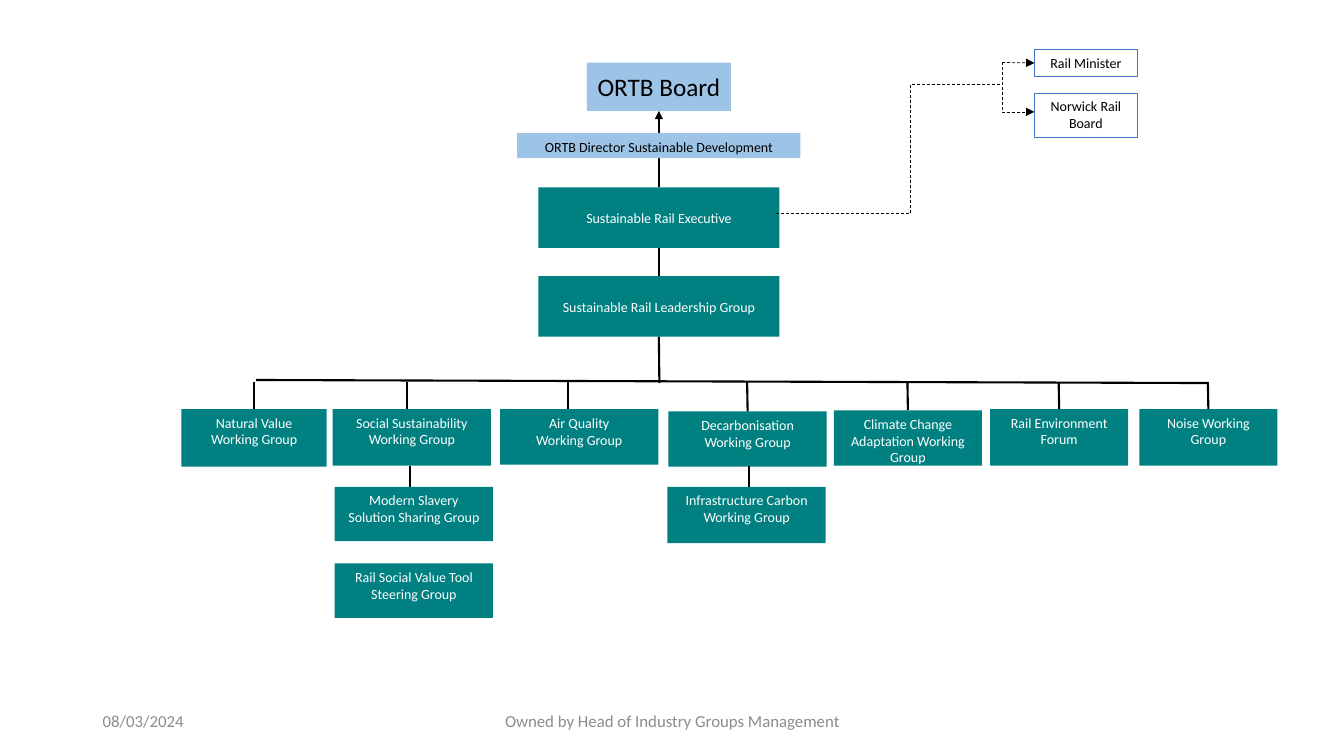
from dataclasses import dataclass

from pptx import Presentation
from pptx.dml.color import RGBColor as RGB
from pptx.enum.dml import MSO_LINE
from pptx.enum.shapes import MSO_CONNECTOR as CONN, MSO_SHAPE as SHAPE
from pptx.enum.text import MSO_ANCHOR as ANCHOR, PP_ALIGN as ALIGN
from pptx.oxml.ns import qn
from pptx.util import Pt
from lxml import etree

PX = 9144  # one hundred px to the inch
TOP, LEFT, BOTTOM, RIGHT = range(4)


@dataclass(frozen=True)
class Theme:
    font: str = "Calibri"
    teal: str = "008080"
    sky: str = "9DC3E6"
    outline: str = "4472C4"
    black: str = "000000"
    white: str = "FFFFFF"
    grey: str = "8C8C8C"
    title: int = 18
    footer: int = 12
    body: int = 10
    solid: float = 1.5
    dashed: float = 0.5
    border: float = 0.25


T = Theme()


def emu(*lengths):
    return [n * PX for n in lengths]


def put_text(s, text, size=T.body, color=T.white, align=ALIGN.CENTER, anchor=ANCHOR.TOP):
    tf = s.text_frame
    tf.word_wrap = True
    tf.vertical_anchor = anchor
    for i, line in enumerate(text.split("\n")):
        p = tf.paragraphs[0] if i == 0 else tf.add_paragraph()
        p.alignment = align
        r = p.add_run()
        r.text = line
        r.font.name, r.font.size = T.font, Pt(size)
        r.font.color.rgb = RGB.from_string(color)


def box(shapes, text, at, fill=T.teal, **fmt):
    """A filled box, or an outlined one when fill is None."""
    s = shapes.add_shape(SHAPE.RECTANGLE, *emu(*at))
    s.shadow.inherit = False
    if fill:
        s.fill.solid()
        s.fill.fore_color.rgb = RGB.from_string(fill)
        s.line.fill.background()
    else:
        s.fill.background()
        s.line.color.rgb = RGB.from_string(T.outline)
        s.line.width = Pt(T.border)
    put_text(s, text, **fmt)
    return s


def label(shapes, text, at, align):
    s = shapes.add_textbox(*emu(*at))
    put_text(s, text, size=T.footer, color=T.grey, align=align, anchor=ANCHOR.MIDDLE)


def link(shapes, start, end, dashed=False, arrow=False, bend=None, begin=None, finish=None):
    """A line; begin and finish are (box, side) pairs to join it to."""
    kind = CONN.STRAIGHT if bend is None else CONN.ELBOW
    c = shapes.add_connector(kind, *emu(*start, *end))
    c.line.color.rgb = RGB.from_string(T.black)
    c.line.width = Pt(T.dashed if dashed else T.solid)
    if dashed:
        c.line.dash_style = MSO_LINE.DASH
    if arrow:
        etree.SubElement(c.line._get_or_add_ln(), qn("a:tailEnd"), type="triangle")
    if bend is not None:
        guides = c._element.spPr.find(qn("a:prstGeom")).get_or_add_avLst()
        etree.SubElement(guides, qn("a:gd"), name="adj1", fmla=f"val {bend}")
    etree.SubElement(c._element.spPr, qn("a:effectLst"))
    if begin:
        c.begin_connect(*begin)
    if finish:
        c.end_connect(*finish)


def leadership(shapes):
    board = box(shapes, "ORTB Board", (582, 62, 143, 48), fill=T.sky,
                size=T.title, color=T.black, anchor=ANCHOR.MIDDLE)
    executive = box(shapes, "Sustainable Rail Executive", (534, 186, 239, 60),
                    anchor=ANCHOR.MIDDLE)
    group = box(shapes, "Sustainable Rail Leadership Group", (534, 274, 239, 60),
                anchor=ANCHOR.MIDDLE)
    link(shapes, (654, 186), (654, 110), arrow=True,
         begin=(executive, TOP), finish=(board, BOTTOM))
    link(shapes, (654, 246), (654, 274), begin=(executive, BOTTOM), finish=(group, TOP))
    link(shapes, (654, 334), (654, 380), begin=(group, BOTTOM))
    box(shapes, "ORTB Director Sustainable Development", (513, 132, 281, 25),
        fill=T.sky, color=T.black)


def external_bodies(shapes):
    minister = box(shapes, "Rail Minister", (1026, 49, 102, 27), fill=None, color=T.black)
    box(shapes, "Norwick Rail Board", (1026, 92, 102, 44), fill=None, color=T.black)
    link(shapes, (770, 212), (994, 84), dashed=True, bend=59500)
    link(shapes, (994, 62), (994, 111), dashed=True)
    link(shapes, (994, 62), (1026, 62), dashed=True, arrow=True, finish=(minister, LEFT))
    link(shapes, (994, 111), (1026, 111), dashed=True, arrow=True)


def working_groups(shapes):
    link(shapes, (254, 377), (1198, 380))
    # Text, box, x of the stem above it
    groups = [
        ("Natural Value Working Group", (180, 406, 144, 57), 254),
        ("Social Sustainability\nWorking Group", (330, 406, 157, 56), 404),
        ("Air Quality\nWorking Group", (496, 406, 157, 55), 563),
        ("Decarbonisation Working Group", (663, 408, 157, 55), 739),
        ("Climate Change Adaptation Working Group", (827, 407, 147, 55), 902),
        ("Rail Environment Forum", (982, 406, 137, 56), 1050),
        ("Noise Working Group", (1130, 406, 137, 56), 1197),
    ]
    for text, at, stem in groups:
        s = box(shapes, text, at)
        centre = at[0] + at[2] // 2
        near = abs(stem - centre) <= 2
        x = centre if near else stem
        link(shapes, (x, 379), (x, at[1]), finish=(s, TOP) if near else None)

    # Subgroups
    link(shapes, (407, 462), (407, 483))
    link(shapes, (743, 462), (743, 483))
    for text, at in [
        ("Modern Slavery Solution Sharing Group", (332, 483, 157, 54)),
        ("Rail Social Value Tool\nSteering Group", (332, 559, 157, 54)),
        ("Infrastructure Carbon Working Group", (662, 483, 157, 56)),
    ]:
        box(shapes, text, at)


def main():
    prs = Presentation()
    prs.slide_width, prs.slide_height = emu(1333, 750)
    shapes = prs.slides.add_slide(prs.slide_layouts[6]).shapes

    leadership(shapes)
    external_bodies(shapes)
    working_groups(shapes)

    # Footer
    label(shapes, "08/03/2024", (92, 695, 300, 40), ALIGN.LEFT)
    label(shapes, "Owned by Head of Industry Groups Management",
          (442, 695, 450, 40), ALIGN.CENTER)

    prs.save("out.pptx")


if __name__ == "__main__":
    main()
